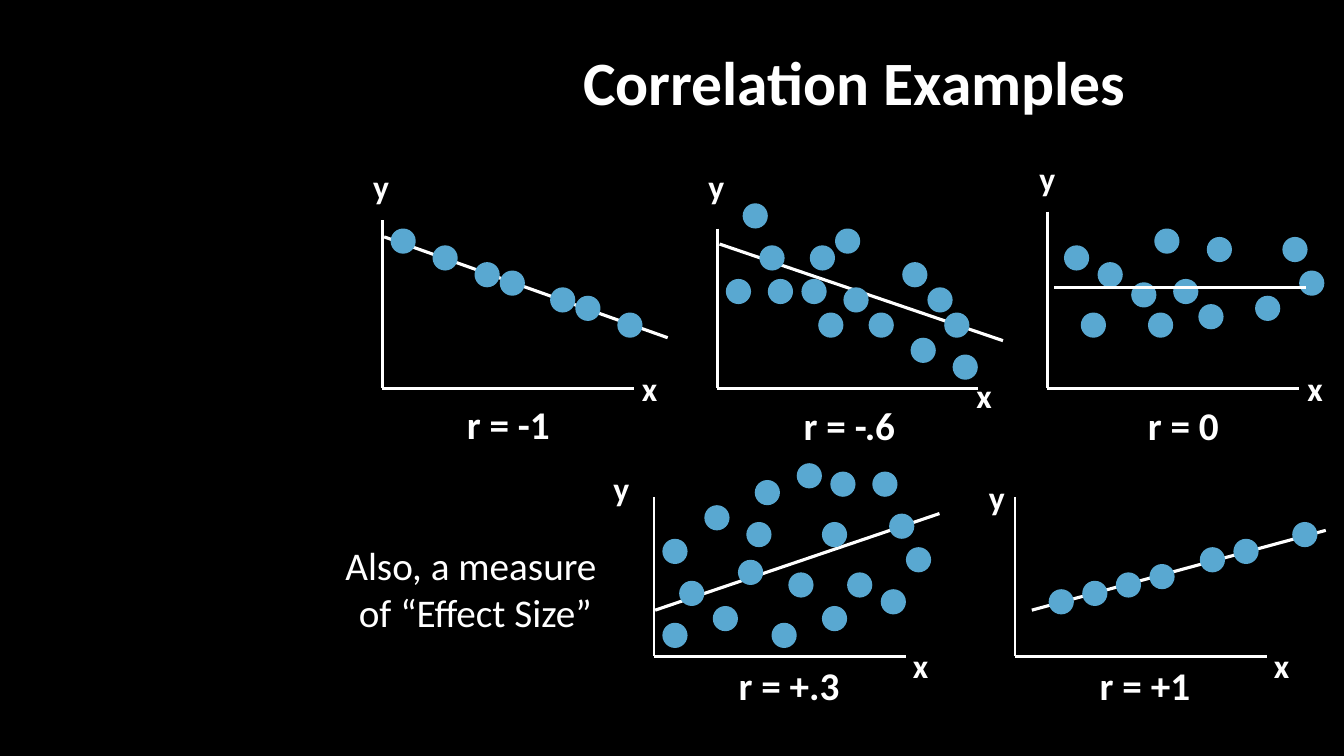
from lxml import etree
from pptx import Presentation
from pptx import util as u
from pptx.dml.color import RGBColor
from pptx.enum import shapes, text
from pptx.oxml import ns

BLACK = RGBColor(0x00, 0x00, 0x00)
WHITE = RGBColor(0xFF, 0xFF, 0xFF)
BLUE = RGBColor(0x59, 0xA8, 0xD1)
CELL = 2.54 / 12
DOT = 3

PLOTS = [
    dict(corner=(9.63, 9.78), axes=(30, 20), trend=(0.25, 18, 34, 6),
         x=(29.75, 3), y=(-2.25, 27), label=("r = -1", 8.9, -0.85, 12.5),
         dots=[(1, 19), (6, 17), (11, 15), (14, 14), (20, 12), (23, 11), (28, 9)]),
    dict(corner=(18.08, 9.78), axes=(31, 19), trend=(0.25, 17.15, 34, 5.65),
         x=(29.65, 2.15), y=(-2.25, 27), label=("r = -.6", 9.1, -0.95, 13.7),
         dots=[(28, 4), (27, 9), (3, 22), (5, 17), (23, 6), (1, 13), (18, 9),
               (11, 17), (14, 19), (25, 12), (6, 13), (22, 15), (10, 13),
               (15, 12), (12, 9)]),
    dict(corner=(26.39, 9.78), axes=(30, 21), trend=(0.85, 12, 30.85, 12),
         x=(29.8, 3), y=(-2.1, 28), label=("r = 0", 10.8, -0.95, 11),
         dots=[(4, 9), (28, 18), (30, 14), (18, 10), (19, 18), (12.75, 19),
               (2, 17), (6, 15), (10, 12.6), (15, 13), (12, 9), (24.75, 11)],
         trend_in_front=True),
    dict(corner=(16.48, 16.54), axes=(30, 19), trend=(0.15, 5.5, 34, 17),
         x=(29.65, 2), y=(-6, 23), label=("r = +.3", 8.9, 0, 14.65),
         dots=[(1, 4), (3, 9), (26, 22), (28, 17), (7, 6), (30, 13), (20, 6),
               (21, 22), (12, 21), (1, 14), (6, 18), (10, 11.5), (23, 10),
               (16, 10), (14, 4), (27, 8), (20, 16), (17, 23), (11, 16)]),
    dict(corner=(25.58, 16.54), axes=(30, 19), trend=(2, 5.5, 37, 15),
         x=(29.65, 2), y=(-4.3, 22), label=("r = +1", 8.9, 0, 13.3),
         dots=[(4, 8), (8, 9), (12, 10), (16, 11), (22, 13), (26, 14), (33, 16)]),
]


class Sketch:
    """Draws white text, lines and scatter plots on a black page."""

    def __init__(self, deck):
        self.page = deck.slides.add_slide(deck.slide_layouts[6])
        self.page.background.fill.solid()
        self.page.background.fill.fore_color.rgb = BLACK
        self.font = {"name": "Calibri", "bold": True}

    def fill_text(self, box, lines, size, frame=None, para=None, **font):
        layout = {"word_wrap": False, "auto_size": text.MSO_AUTO_SIZE.SHAPE_TO_FIT_TEXT}
        body = box.text_frame
        for name, value in (layout | (frame or {})).items():
            setattr(body, name, value)
        for index, line in enumerate(lines):
            paragraph = body.paragraphs[0] if index == 0 else body.add_paragraph()
            for name, value in (para or {}).items():
                setattr(paragraph, name, value)
            span = paragraph.add_run()
            span.text = line
            for name, value in (self.font | {"size": u.Pt(size)} | font).items():
                setattr(span.font, name, value)
            span.font.color.rgb = WHITE

    def text(self, place, lines, size, **style):
        box = self.page.shapes.add_textbox(*map(u.Cm, place))
        self.fill_text(box, lines, size, **style)

    def shape(self, kind, place, color):
        shape = self.page.shapes.add_shape(kind, *map(u.Cm, place))
        shape.shadow.inherit = False
        shape.fill.solid()
        shape.fill.fore_color.rgb = color
        shape.line.fill.background()
        return shape

    def line(self, start, end, width):
        line = self.page.shapes.add_connector(
            shapes.MSO_CONNECTOR.STRAIGHT, *map(u.Cm, start + end))
        line.line.color.rgb = WHITE
        line.line.width = u.Pt(width)
        etree.SubElement(line._element.spPr, ns.qn("a:effectLst"))

    def plot(self, corner, axes, trend, x, y, label, dots, trend_in_front=False):
        def at(column, row):
            return corner[0] + column * CELL, corner[1] - row * CELL

        def draw_trend():
            self.line(at(*trend[:2]), at(*trend[2:]), 2.25)

        caption, column, row, width = label
        box = self.shape(shapes.MSO_SHAPE.RECTANGLE,
                         (*at(column, row), width * CELL, 1.45), BLACK)
        self.fill_text(box, [caption], 28, para={"alignment": text.PP_ALIGN.LEFT})
        self.line(at(0, axes[1]), at(0, 0), 2)
        self.line(at(0, 0), at(axes[0], 0), 2)
        if not trend_in_front:
            draw_trend()
        for dot in dots:
            self.shape(shapes.MSO_SHAPE.OVAL, (*at(*dot), DOT * CELL, DOT * CELL), BLUE)
        if trend_in_front:
            draw_trend()
        for name, spot in (("x", x), ("y", y)):
            self.text((*at(*spot), 0.91, 1.27), [name], 24)


def main():
    deck = Presentation()
    deck.slide_width, deck.slide_height = u.Cm(33.87), u.Cm(19.05)
    sketch = Sketch(deck)
    sketch.text((6.99, 0.84, 21.64, 2.74), ["Correlation Examples"], 44,
                frame={"word_wrap": True, "auto_size": text.MSO_AUTO_SIZE.NONE,
                       "vertical_anchor": text.MSO_ANCHOR.MIDDLE},
                para={"alignment": text.PP_ALIGN.RIGHT, "line_spacing": 0.8})
    for plot in PLOTS:
        sketch.plot(**plot)
    sketch.text((8.41, 13.51, 7.14, 2.64), ["Also, a measure ", "of “Effect Size”"], 28,
                para={"alignment": text.PP_ALIGN.CENTER}, bold=False)
    deck.save("out.pptx")


if __name__ == "__main__":
    main()
